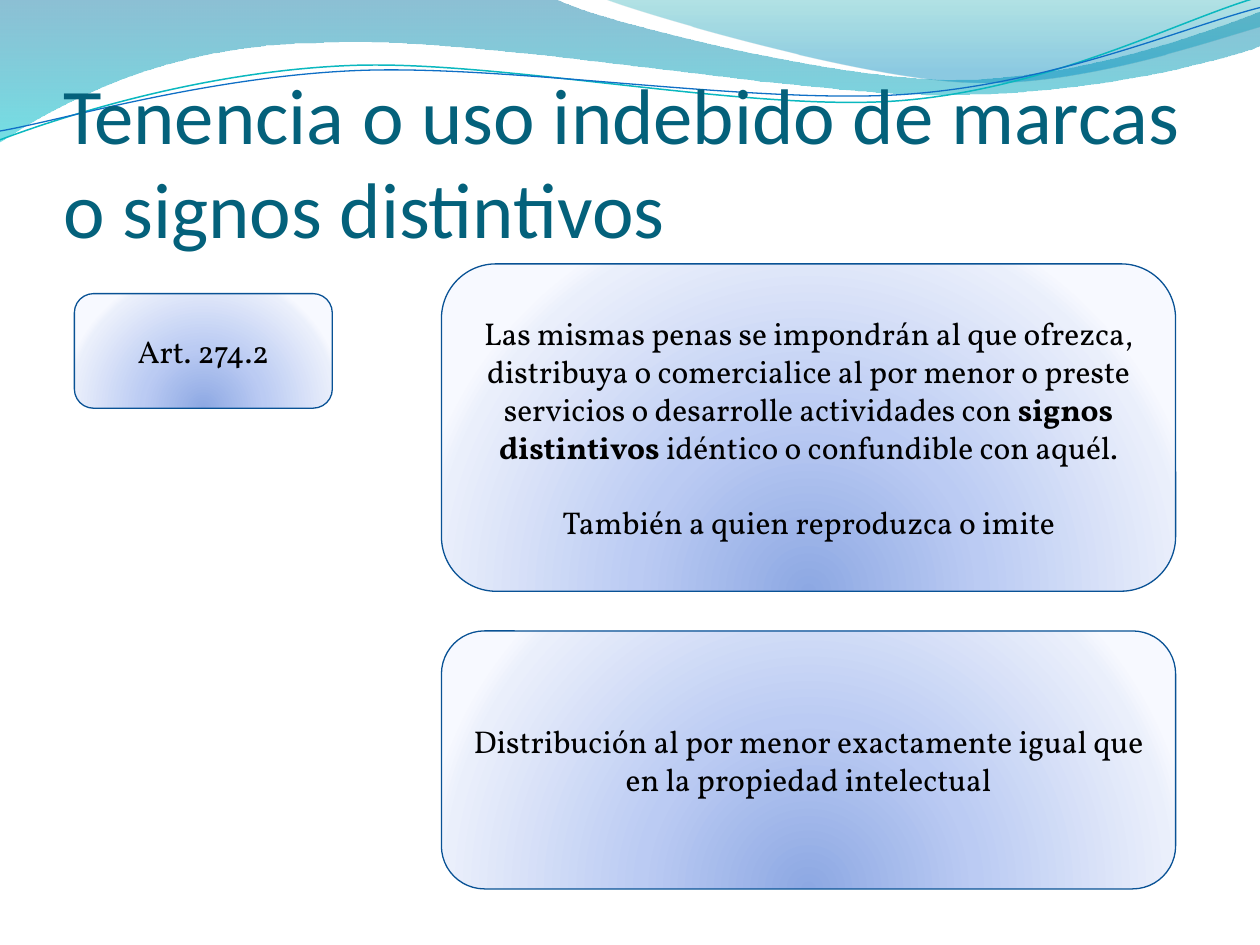
from dataclasses import dataclass
from math import cos, radians, sin
from typing import Optional

from lxml import etree
from pptx import Presentation
from pptx import util as u
from pptx.dml.color import RGBColor
from pptx.enum import shapes, text
from pptx.oxml import ns

Point = tuple[float, float]
Stop = tuple[int, str, int]  # position %, colour, opacity %


@dataclass(frozen=True)
class Theme:
    heading_font: str = "Calibri"
    body_font: str = "Vollkorn"
    heading_size: float = 45
    body_size: float = 18
    paragraph_gap: float = 21.5
    heading: str = "04617B"
    body: str = "000000"
    card_line: str = "095295"
    card_line_width: float = 0.75
    card_stops: tuple[Stop, ...] = (
        (0, "8DA8E3", 100), (43, "BBCBF3", 100), (93, "EAEFFB", 100), (100, "F7F9FF", 100))
    teal_band: tuple[Stop, ...] = ((0, "0074A1", 45), (100, "00C6CF", 55))
    blue_band: tuple[Stop, ...] = ((0, "00A1A9", 30), (80, "008BBF", 45))
    teal_line: str = "0AB8BF"
    blue_line: str = "0F6FC6"


@dataclass(frozen=True)
class Wave:
    """Points in thousandths of the slide width: 2 make a line, 6 a cubic curve."""
    start: Point
    segments: tuple[tuple[float, ...], ...]
    stops: tuple[Stop, ...] = ()
    line: Optional[str] = None
    width: float = 0.75
    tilt: float = 0
    center: Point = (0, 0)


@dataclass(frozen=True)
class Card:
    left: float
    top: float
    width: float
    height: float
    paragraphs: list[list[tuple[str, bool]]]


THEME = Theme()
SLIDE_WIDTH, SLIDE_HEIGHT = u.Cm(25.4), u.Cm(19.05)
LINE_TILT = -2.7
LINEAR_DOWN = '<a:lin ang="5400000" scaled="0"/>'
CIRCLE_FROM_BELOW = ('<a:path path="circle"><a:fillToRect l="50000" t="130000" '
                     'r="50000" b="-30000"/></a:path>')

WAVES = [
    Wave((0, -1), ((440, -1), (476, 17, 664, 63, 758, 63), (853, 63, 958, 26, 1000, 9),
                   (1001, 36), (983, 44, 870, 76, 746, 75), (622, 75, 382, 28, 257, 34),
                   (129, 35, 46, 83, -1, 113), (0, -1)), THEME.teal_band),
    Wave((479, -1), ((509, 11, 682, 62, 769, 65), (856, 69, 961, 32, 1000, 21), (1000, 0),
                     (479, -1)), THEME.blue_band),
    Wave((0, 111), ((48, 93, 158, 57, 277, 52), (395, 47, 593, 89, 713, 80),
                    (833, 71, 938, 15, 998, -2)),
         line=THEME.teal_line, width=0.85, tilt=LINE_TILT, center=(499, 57.5)),
    Wave((0, 104), ((47, 96, 164, 61, 283, 56), (403, 51, 597, 83, 717, 75),
                    (836, 67, 941, 21, 1000, 6)),
         line=THEME.blue_line, tilt=LINE_TILT, center=(499.5, 59)),
]

DETAIL_LEFT, DETAIL_WIDTH = 8.9, 14.8
CARDS = [
    Card(1.5, 5.92, 5.2, 2.31, [[("Art. 274.2", False)]]),
    Card(DETAIL_LEFT, 5.32, DETAIL_WIDTH, 6.6, [
        [("Las mismas penas se impondrán al que ofrezca, distribuya o comercialice al por "
          "menor o preste servicios o desarrolle actividades con ", False),
         ("signos distintivos ", True),
         ("idéntico o confundible con aquél.", False)],
        [("También a quien reproduzca o imite", False)]]),
    Card(DETAIL_LEFT, 12.72, DETAIL_WIDTH, 5.2, [
        [("Distribución al por menor exactamente igual que en la propiedad intelectual",
          False)]]),
]


def fill_gradient(shape, stops: tuple[Stop, ...], direction: str) -> None:
    marks = "".join(
        f'<a:gs pos="{pos * 1000}"><a:srgbClr val="{color}">'
        f'<a:alpha val="{opacity * 1000}"/></a:srgbClr></a:gs>'
        for pos, color, opacity in stops)
    gradient = etree.fromstring(
        f'<a:gradFill xmlns:a="{ns.nsuri("a")}" rotWithShape="1">'
        f'<a:gsLst>{marks}</a:gsLst>{direction}</a:gradFill>')
    shape.fill.background()
    properties = shape.element.spPr
    properties.replace(properties.find(ns.qn("a:noFill")), gradient)


def set_line(shape, color: Optional[str], width: float) -> None:
    if color is None:
        shape.line.fill.background()
        return
    shape.line.color.rgb = RGBColor.from_string(color)
    shape.line.width = u.Pt(width)


def write(frame, paragraphs: list[list[tuple[str, bool]]], *, font: str, size: float,
          color: str, align, anchor, gap: float = 0) -> None:
    frame.word_wrap = True
    frame.auto_size = text.MSO_AUTO_SIZE.NONE
    frame.vertical_anchor = anchor
    for index, runs in enumerate(paragraphs):
        paragraph = frame.add_paragraph() if index else frame.paragraphs[0]
        paragraph.alignment = align
        if index:
            paragraph.space_before = u.Pt(gap)
        for words, bold in runs:
            run = paragraph.add_run()
            run.text = words
            run.font.name, run.font.size, run.font.bold = font, u.Pt(size), bold
            run.font.color.rgb = RGBColor.from_string(color)


def place(wave: Wave, point: Point) -> Point:
    """Undo the tilt, which the shape's rotation adds again, and convert to EMU."""
    angle = radians(-wave.tilt)
    dx, dy = point[0] - wave.center[0], point[1] - wave.center[1]
    x = wave.center[0] + dx * cos(angle) - dy * sin(angle)
    y = wave.center[1] + dx * sin(angle) + dy * cos(angle)
    return x * SLIDE_WIDTH / 1000, y * SLIDE_WIDTH / 1000


def bend(shape, wave: Wave) -> None:
    """Join each three line steps that describe a curve into one cubic curve."""
    steps = iter(list(shape.element.iter(ns.qn("a:lnTo"))))
    for segment in wave.segments:
        group = [next(steps) for _ in range(len(segment) // 2)]
        if len(group) == 3:
            curve = etree.Element(ns.qn("a:cubicBezTo"))
            group[0].addprevious(curve)
            for step in group:
                curve.append(step[0])
                step.getparent().remove(step)


def draw_wave(slide, wave: Wave) -> None:
    points = [place(wave, pair) for segment in wave.segments
              for pair in zip(segment[::2], segment[1::2])]
    builder = slide.shapes.build_freeform(*place(wave, wave.start))
    builder.add_line_segments(points, close=bool(wave.stops))
    shape = builder.convert_to_shape()
    bend(shape, wave)
    shape.rotation = wave.tilt
    shape.shadow.inherit = False
    if wave.stops:
        fill_gradient(shape, wave.stops, LINEAR_DOWN)
    else:
        shape.fill.background()
    set_line(shape, wave.line, wave.width)
    slide.shapes.title.element.addprevious(shape.element)


def draw_title(slide, words: str) -> None:
    title = slide.shapes.title
    title.left, title.top = u.Cm(1.27), u.Cm(1.95)
    title.width, title.height = u.Cm(23.06), u.Cm(3.18)
    frame = title.text_frame
    frame.margin_left = frame.margin_right = frame.margin_bottom = u.Cm(0)
    write(frame, [[(words, False)]], font=THEME.heading_font, size=THEME.heading_size,
          color=THEME.heading, align=text.PP_ALIGN.LEFT, anchor=text.MSO_ANCHOR.BOTTOM)


def draw_card(slide, card: Card) -> None:
    shape = slide.shapes.add_shape(
        shapes.MSO_SHAPE.ROUNDED_RECTANGLE,
        u.Cm(card.left), u.Cm(card.top), u.Cm(card.width), u.Cm(card.height))
    shape.shadow.inherit = False
    fill_gradient(shape, THEME.card_stops, CIRCLE_FROM_BELOW)
    set_line(shape, THEME.card_line, THEME.card_line_width)
    write(shape.text_frame, card.paragraphs, font=THEME.body_font, size=THEME.body_size,
          color=THEME.body, align=text.PP_ALIGN.CENTER, anchor=text.MSO_ANCHOR.MIDDLE,
          gap=THEME.paragraph_gap)


def main() -> None:
    deck = Presentation()
    deck.slide_width, deck.slide_height = SLIDE_WIDTH, SLIDE_HEIGHT
    slide = deck.slides.add_slide(deck.slide_layouts[5])
    for wave in WAVES:
        draw_wave(slide, wave)
    draw_title(slide, "Tenencia o uso indebido de marcas o signos distintivos")
    for card in CARDS:
        draw_card(slide, card)
    deck.save("out.pptx")


if __name__ == "__main__":
    main()
